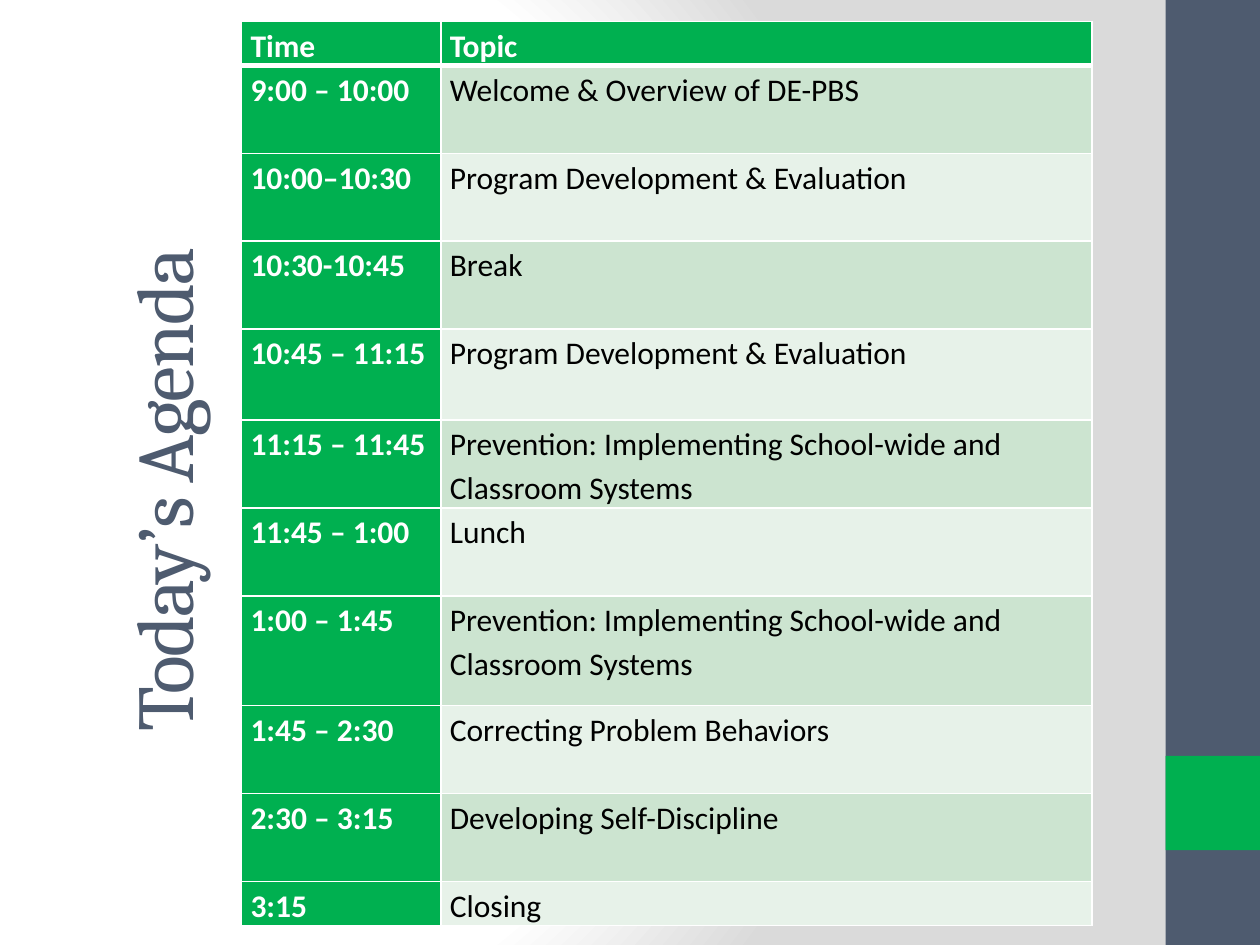
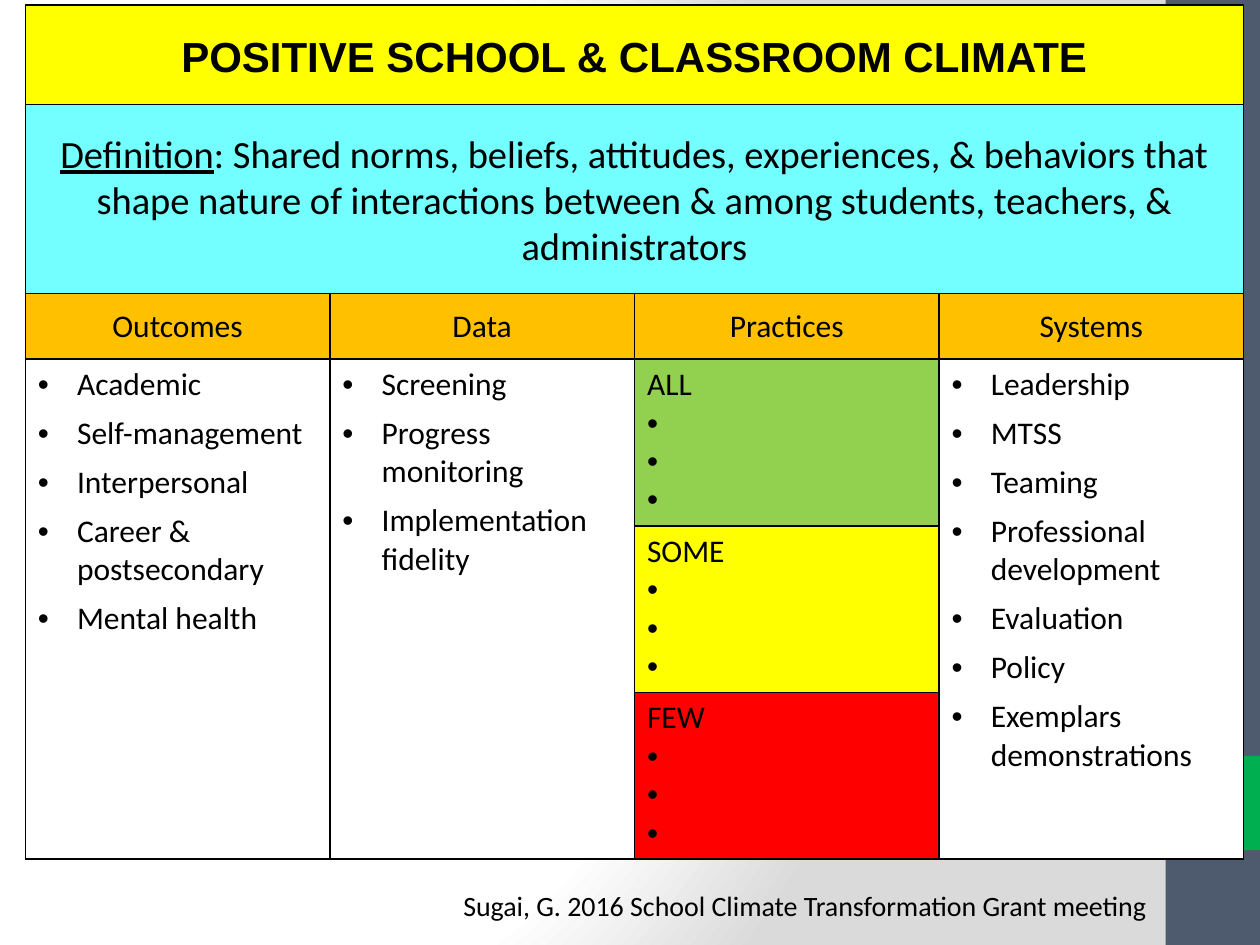
"""Build the agenda slide and the school climate slide."""
import pptx
import pptx.dml.color
import pptx.enum.shapes
import pptx.enum.text
import pptx.oxml
import pptx.oxml.ns
import pptx.util

Cm = pptx.util.Cm
Pt = pptx.util.Pt
color = pptx.dml.color.RGBColor.from_string
RECTANGLE = pptx.enum.shapes.MSO_SHAPE.RECTANGLE
MIDDLE = pptx.enum.text.MSO_ANCHOR.MIDDLE
LEFT = pptx.enum.text.PP_ALIGN.LEFT
CENTER = pptx.enum.text.PP_ALIGN.CENTER
NAMESPACE = pptx.oxml.ns.nsdecls("a")

SLATE, GREEN, YELLOW = "4E5B6F", "00B050", "FFFF00"
BLACK, WHITE = "000000", "FFFFFF"


def write(paragraph, text, size=18, font="Calibri", ink=BLACK, bold=False, underline=False,
          align=LEFT, line_spacing=None, space_before=0, bullet=False, tracking=0):
    """Add a formatted run to a paragraph."""
    if bullet:
        properties = paragraph._p.get_or_add_pPr()
        properties.set("marL", str(Cm(0.79)))
        properties.set("indent", str(-Cm(0.79)))
        for tag in (f'<a:buFont {NAMESPACE} typeface="Arial"/>', f'<a:buChar {NAMESPACE} char="•"/>'):
            properties.append(pptx.oxml.parse_xml(tag))
    paragraph.alignment = align
    paragraph.space_before = Pt(space_before)
    if line_spacing:
        paragraph.line_spacing = line_spacing
    run = paragraph.add_run()
    run.text = text
    run.font.name = font
    run.font.size = Pt(size)
    run.font.bold = bold
    run.font.underline = underline
    run.font.color.rgb = color(ink)
    if tracking:
        run._r.get_or_add_rPr().set("spc", str(tracking * 100))


def format_cell(cell, fill, border, top=1, bottom=1):
    """Give a table cell its borders and fill."""
    properties = cell._tc.get_or_add_tcPr()
    for side, width in (("L", 1), ("R", 1), ("T", top), ("B", bottom)):
        properties.append(pptx.oxml.parse_xml(
            f'<a:ln{side} {NAMESPACE} w="{Pt(width)}"><a:solidFill><a:srgbClr val="{border}"/>'
            f'</a:solidFill></a:ln{side}>'))
    cell.fill.solid()
    cell.fill.fore_color.rgb = color(fill)


presentation = pptx.Presentation()
presentation.slide_width = Cm(25.4)
presentation.slide_height = Cm(19.05)
master = presentation.slide_master
title_only = presentation.slide_layouts[5]
agenda_slide = presentation.slides.add_slide(title_only)
climate_slide = presentation.slides.add_slide(title_only)

master.background.fill.solid()
plain_fill = master.element.find(".//" + pptx.oxml.ns.qn("p:bgPr"))[0]
plain_fill.getparent().replace(plain_fill, pptx.oxml.parse_xml(
    f'<a:gradFill {NAMESPACE} rotWithShape="1"><a:gsLst>'
    '<a:gs pos="0"><a:srgbClr val="FFFFFF"/></a:gs>'
    '<a:gs pos="75000"><a:srgbClr val="FFFFFF"/></a:gs>'
    '<a:gs pos="100000"><a:srgbClr val="DADADA"/></a:gs></a:gsLst>'
    '<a:path path="circle"><a:fillToRect l="20000" t="50000" r="100000" b="50000"/></a:path>'
    '</a:gradFill>'))

for number, (top, height, fill) in enumerate([(0, 19.05, SLATE), (15.24, 1.9, GREEN)]):
    band = agenda_slide.shapes.add_shape(RECTANGLE, Cm(23.5), Cm(top), Cm(1.9), Cm(height))
    band.shadow.inherit = False
    band.fill.solid()
    band.fill.fore_color.rgb = color(fill)
    band.line.fill.background()
    band.element.nvSpPr.cNvPr.set("id", str(100 + number))
    master.shapes.element.insert(2 + number, band.element)

title = agenda_slide.shapes.title
title.left, title.top, title.width, title.height = Cm(-7.32), Cm(2.84), Cm(21.16), Cm(3.18)
title.rotation = 270
title.text_frame.auto_size = pptx.enum.text.MSO_AUTO_SIZE.NONE
title.text_frame.vertical_anchor = MIDDLE
write(title.text_frame.paragraphs[0], "Today’s Agenda", size=46, font="Cambria", ink=SLATE, tracking=-1)

agenda = [
    ("Time", "Topic", 0.87),
    ("9:00 – 10:00", "Welcome & Overview of DE-PBS", 1.77),
    ("10:00–10:30", "Program Development & Evaluation", 1.77),
    ("10:30-10:45", "Break", 1.77),
    ("10:45 – 11:15", "Program Development & Evaluation", 1.83),
    ("11:15 – 11:45", "Prevention: Implementing School-wide and Classroom Systems", 1.77),
    ("11:45 – 1:00", "Lunch", 1.77),
    ("1:00 – 1:45", "Prevention: Implementing School-wide and Classroom Systems", 2.21),
    ("1:45 – 2:30", "Correcting Problem Behaviors", 1.77),
    ("2:30 – 3:15", "Developing Self-Discipline", 1.77),
    ("3:15", "Closing", 0.87),
]
agenda_table = agenda_slide.shapes.add_table(
    len(agenda), 2, Cm(4.87), Cm(0.43), Cm(17.14), Cm(18.17)).table
agenda_table.columns[0].width = Cm(4.02)
agenda_table.columns[1].width = Cm(13.12)
for row, (time, topic, height) in enumerate(agenda):
    agenda_table.rows[row].height = Cm(height)
    for column, text in enumerate((time, topic)):
        cell = agenda_table.cell(row, column)
        cell.margin_left = cell.margin_right = Cm(0.18)
        cell.margin_top = cell.margin_bottom = 0
        heading = row == 0 or column == 0
        fill = GREEN if heading else "CCE4D0" if row % 2 else "E7F2E9"
        format_cell(cell, fill, WHITE, top=3 if row == 1 else 1, bottom=3 if row == 0 else 1)
        write(cell.text_frame.paragraphs[0], text, ink=WHITE if heading else BLACK,
              bold=heading, line_spacing=1.15)

banner = climate_slide.shapes.title
banner.left, banner.top, banner.width, banner.height = Cm(0.51), Cm(0.1), Cm(24.56), Cm(2.03)
definition = climate_slide.shapes.add_shape(RECTANGLE, Cm(0.51), Cm(2.11), Cm(24.56), Cm(3.81))
definition.shadow.inherit = False
for shape, fill in ((banner, YELLOW), (definition, "73FEFF")):
    shape.fill.solid()
    shape.fill.fore_color.rgb = color(fill)
    shape.line.color.rgb = color(BLACK)
    shape.line.width = Pt(0.75)
    shape.text_frame.word_wrap = True
    shape.text_frame.auto_size = pptx.enum.text.MSO_AUTO_SIZE.NONE
    shape.text_frame.vertical_anchor = MIDDLE
write(banner.text_frame.paragraphs[0], "POSITIVE SCHOOL & CLASSROOM CLIMATE",
      size=24, font="Arial", bold=True, align=CENTER)
definition_paragraph = definition.text_frame.paragraphs[0]
write(definition_paragraph, "Definition", size=22, underline=True, align=CENTER)
write(definition_paragraph, ": Shared norms, beliefs, attitudes, experiences, & behaviors that shape "
      "nature of interactions between & among students, teachers, & administrators",
      size=22, align=CENTER)

elements = {
    "Outcomes": ["Academic", "Self-management", "Interpersonal", "Career & postsecondary", "Mental health"],
    "Data": ["Screening", "Progress monitoring", "Implementation fidelity"],
    "Practices": [],
    "Systems": ["Leadership", "MTSS", "Teaming", "Professional development", "Evaluation", "Policy",
                "Exemplars demonstrations"],
}
tiers = [("ALL", "92D050"), ("SOME", YELLOW), ("FEW", "FF0000")]
climate_table = climate_slide.shapes.add_table(
    4, 4, Cm(0.51), Cm(5.92), Cm(24.56), Cm(11.4)).table
for row, height in enumerate((1.32, 3.36, 3.36, 3.36)):
    climate_table.rows[row].height = Cm(height)
for column, (heading, items) in enumerate(elements.items()):
    climate_table.columns[column].width = Cm(6.14)
    header = climate_table.cell(0, column)
    header.vertical_anchor = MIDDLE
    format_cell(header, "FFC000", BLACK)
    write(header.text_frame.paragraphs[0], heading, align=CENTER)
    for row, (tier, tier_fill) in enumerate(tiers, start=1):
        cell = climate_table.cell(row, column)
        format_cell(cell, WHITE if items else tier_fill, BLACK)
        if not items:
            write(cell.text_frame.paragraphs[0], tier)
            for blank in range(3):
                write(cell.text_frame.add_paragraph(), " ", bullet=True)
    if items:
        body = climate_table.cell(1, column)
        body.merge(climate_table.cell(3, column))
        for index, item in enumerate(items):
            paragraph = body.text_frame.add_paragraph() if index else body.text_frame.paragraphs[0]
            write(paragraph, item, bullet=True, space_before=6 if index else 0)

citation = climate_slide.shapes.add_textbox(Cm(9.09), Cm(17.78), Cm(15.98), Cm(0.94))
citation.text_frame.word_wrap = True
write(citation.text_frame.paragraphs[0],
      "Sugai, G. 2016 School Climate Transformation Grant meeting", size=16)

presentation.save("out.pptx")
